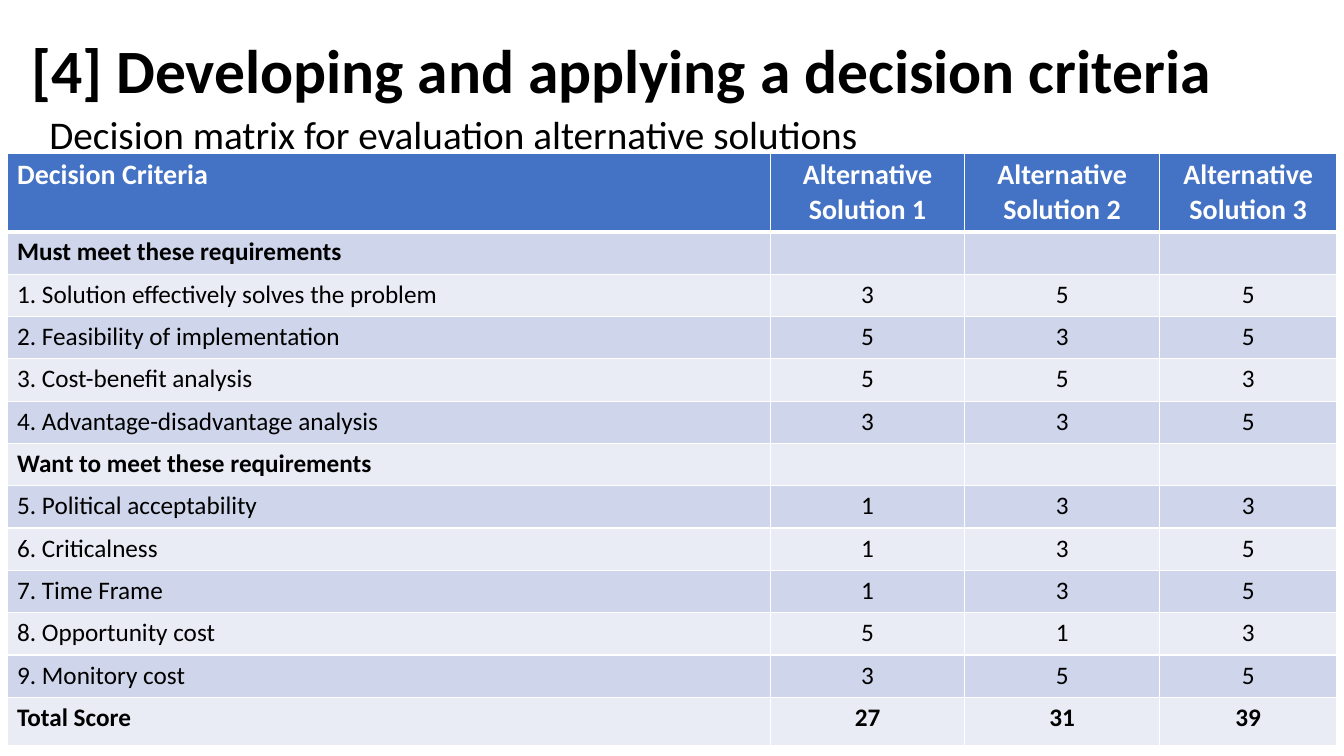
from dataclasses import dataclass

from lxml import etree
from pptx import Presentation
from pptx.dml.color import RGBColor
from pptx.enum.text import MSO_ANCHOR, MSO_AUTO_SIZE, PP_ALIGN
from pptx.oxml.ns import qn
from pptx.util import Pt

LEFT, CENTER = PP_ALIGN.LEFT, PP_ALIGN.CENTER
TOP, MIDDLE = MSO_ANCHOR.TOP, MSO_ANCHOR.MIDDLE
NO_AUTOFIT = MSO_AUTO_SIZE.NONE
EMU_PER_PX = 9144
TITLE_AND_CONTENT = 1


@dataclass(frozen=True)
class Theme:
    font: str = "Calibri"
    ink: str = "000000"
    paper: str = "FFFFFF"
    header: str = "4472C4"
    bands: tuple = ("CFD5EA", "E9EBF5")
    title_size: int = 44
    subtitle_size: int = 28
    header_size: int = 20
    cell_size: int = 18
    rule: int = 1
    header_rule: int = 3


THEME = Theme()

SLIDE_SIZE = (1333, 750)
TITLE_BOX = (21, 0, 1203, 145)
SUBTITLE_BOX = (39, 110, 1185, 476)
MATRIX_BOX = (7, 152, 1319, 584)
SCORE_WIDTHS = (193, 193, 176)
HEADER_HEIGHT, TOTAL_HEIGHT = 73, 48

HEADINGS = ("Decision Criteria", *(f"Alternative Solution {n}" for n in (1, 2, 3)))
CRITERIA = {
    "Must meet these requirements": (
        ("Solution effectively solves the problem", 3, 5, 5),
        ("Feasibility of implementation", 5, 3, 5),
        ("Cost-benefit analysis", 5, 5, 3),
        ("Advantage-disadvantage analysis", 3, 3, 5),
    ),
    "Want to meet these requirements": (
        ("Political acceptability", 1, 3, 3),
        ("Criticalness", 1, 3, 5),
        ("Time Frame", 1, 3, 5),
        ("Opportunity cost", 5, 1, 3),
        ("Monitory cost", 3, 5, 5),
    ),
}


def px(length):
    return length * EMU_PER_PX


def write(frame, text, *, size, color=THEME.ink, bold=False, align=LEFT,
          line_spacing=None, space_before=None):
    paragraph = frame.paragraphs[0]
    paragraph.alignment = align
    if line_spacing is not None:
        paragraph.line_spacing = line_spacing
    if space_before is not None:
        paragraph.space_before = Pt(space_before)
    run = paragraph.add_run()
    run.text = text
    run.font.name = THEME.font
    run.font.size = Pt(size)
    run.font.bold = bold
    run.font.color.rgb = RGBColor.from_string(color)
    return paragraph


def place_heading(placeholder, box, text, anchor, **text_format):
    placeholder.left, placeholder.top, placeholder.width, placeholder.height = map(px, box)
    frame = placeholder.text_frame
    frame.word_wrap = True
    frame.auto_size = NO_AUTOFIT
    frame.vertical_anchor = anchor
    return write(frame, text, line_spacing=0.9, **text_format)


def remove_bullet(paragraph):
    properties = paragraph._p.get_or_add_pPr()
    properties.set("marL", "0")
    properties.set("indent", "0")
    etree.SubElement(properties, qn("a:buNone"))


def style_cell(cell, fill, top_rule, bottom_rule):
    properties = cell._tc.get_or_add_tcPr()
    rules = {"lnL": THEME.rule, "lnR": THEME.rule, "lnT": top_rule, "lnB": bottom_rule}
    for side, weight in rules.items():
        line = etree.SubElement(properties, qn(f"a:{side}"), w=str(Pt(weight)))
        solid = etree.SubElement(line, qn("a:solidFill"))
        etree.SubElement(solid, qn("a:srgbClr"), val=THEME.paper)
    cell.fill.solid()
    cell.fill.fore_color.rgb = RGBColor.from_string(fill)


def matrix_rows():
    rows = [(HEADINGS, True)]
    scored = []
    for group, criteria in CRITERIA.items():
        rows.append(((group, "", "", ""), True))
        for name, *scores in criteria:
            scored.append(scores)
            rows.append(((f"{len(scored)}. {name}", *scores), False))
    totals = [sum(column) for column in zip(*scored)]
    rows.append((("Total Score", *totals), True))
    return rows


def place_matrix(slide, box):
    left, top, width, height = box
    rows = matrix_rows()
    matrix = slide.shapes.add_table(len(rows), len(HEADINGS), *map(px, box)).table
    widths = (width - sum(SCORE_WIDTHS), *SCORE_WIDTHS)
    for column, column_width in zip(matrix.columns, widths):
        column.width = px(column_width)
    criterion_height = (height - HEADER_HEIGHT - TOTAL_HEIGHT) // (len(rows) - 2)
    heights = (HEADER_HEIGHT, *[criterion_height] * (len(rows) - 2), TOTAL_HEIGHT)

    for r, (values, bold) in enumerate(rows):
        matrix.rows[r].height = px(heights[r])
        is_header = r == 0
        fill = THEME.header if is_header else THEME.bands[(r - 1) % 2]
        top_rule = THEME.header_rule if r == 1 else THEME.rule
        bottom_rule = THEME.header_rule if is_header else THEME.rule
        for c, value in enumerate(values):
            cell = matrix.cell(r, c)
            style_cell(cell, fill, top_rule, bottom_rule)
            if value != "":
                write(cell.text_frame, str(value), bold=bold,
                      size=THEME.header_size if is_header else THEME.cell_size,
                      color=THEME.paper if is_header else THEME.ink,
                      align=CENTER if c else LEFT)


def build_decision_slide(deck):
    slide = deck.slides.add_slide(deck.slide_layouts[TITLE_AND_CONTENT])
    place_heading(slide.shapes.title, TITLE_BOX,
                  "[4] Developing and applying a decision criteria", MIDDLE,
                  size=THEME.title_size, bold=True)
    subtitle = place_heading(slide.placeholders[1], SUBTITLE_BOX,
                             "Decision matrix for evaluation alternative solutions", TOP,
                             size=THEME.subtitle_size, space_before=10)
    remove_bullet(subtitle)
    place_matrix(slide, MATRIX_BOX)


def main():
    deck = Presentation()
    deck.slide_width, deck.slide_height = map(px, SLIDE_SIZE)
    build_decision_slide(deck)
    deck.save("out.pptx")


if __name__ == "__main__":
    main()
